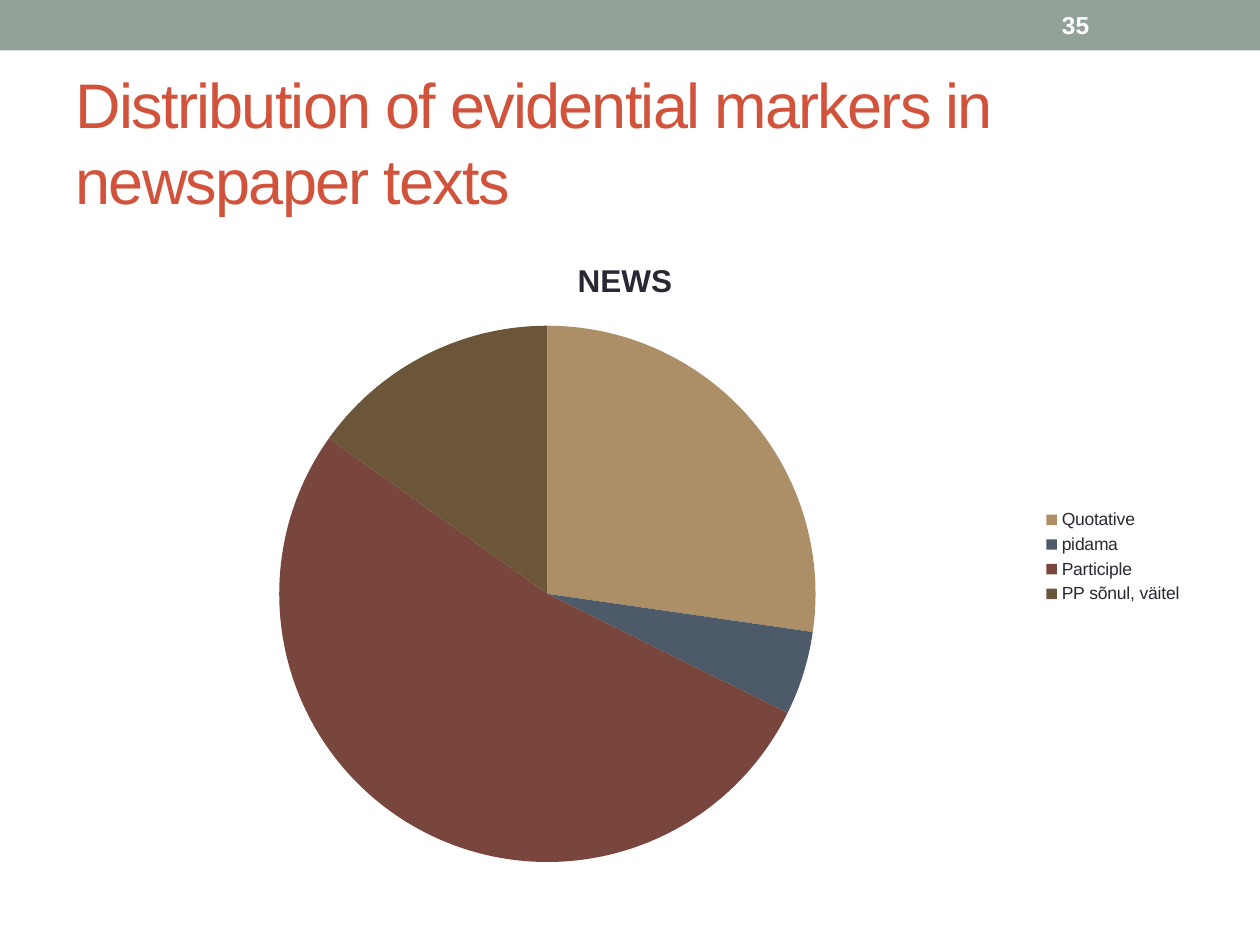
"""Build a slide with a pie chart of evidential markers in newspaper texts."""
from pptx import Presentation
from pptx.chart.data import CategoryChartData
from pptx.dml.color import RGBColor
from pptx.enum.chart import XL_CHART_TYPE, XL_LEGEND_POSITION
from pptx.enum.shapes import MSO_SHAPE
from pptx.enum.text import MSO_ANCHOR, MSO_AUTO_SIZE, PP_ALIGN
from pptx.util import Pt

PIE = XL_CHART_TYPE.PIE
RIGHT = XL_LEGEND_POSITION.RIGHT
RECTANGLE = MSO_SHAPE.RECTANGLE
MIDDLE = MSO_ANCHOR.MIDDLE
NO_AUTOFIT = MSO_AUTO_SIZE.NONE
LEFT = PP_ALIGN.LEFT

FONT = "Arial"
COLORS = {"band": "93A299", "title": "D2533C", "number": "FFFFFF", "text": "292934"}
MARKERS = [
    ("Quotative", 27, "AD8F67"),
    ("pidama ", 5, "4C5A6A"),
    ("Participle", 52, "79463D"),
    ("PP sõnul, väitel", 15, "6C563A"),
]


def style_font(font, size, color, bold=False):
    font.name, font.size, font.bold = FONT, Pt(size), bold
    font.color.rgb = RGBColor.from_string(color)


def fill_text(frame, text, size, color, bold=False):
    frame.word_wrap = True
    frame.auto_size = NO_AUTOFIT
    frame.vertical_anchor = MIDDLE
    paragraph = frame.paragraphs[0]
    paragraph.text = text
    paragraph.alignment = LEFT
    style_font(paragraph.font, size, color, bold)


def add_band(slide):
    band = slide.shapes.add_shape(RECTANGLE, 0, 0, Pt(720), Pt(28.8))
    band.shadow.inherit = False
    band.fill.solid()
    band.fill.fore_color.rgb = RGBColor.from_string(COLORS["band"])
    band.line.fill.background()


def set_title(slide, text):
    title = slide.shapes.title
    title.left, title.top, title.width, title.height = Pt(36), Pt(41.76), Pt(648), Pt(77.76)
    fill_text(title.text_frame, text, 36, COLORS["title"])
    for run in title.text_frame.paragraphs[0].runs:
        run.font._element.set("spc", "-100")


def add_page_number(slide, number):
    box = slide.shapes.add_textbox(Pt(599.76), Pt(1.44), Pt(84.24), Pt(25.92))
    fill_text(box.text_frame, number, 14, COLORS["number"], True)


def add_pie(slide, heading):
    data = CategoryChartData()
    data.categories = [name for name, _, _ in MARKERS]
    data.add_series(heading, [share for _, share, _ in MARKERS])
    chart = slide.shapes.add_chart(
        PIE, Pt(30.96), Pt(133.92), Pt(652.32), Pt(368.64), data
    ).chart
    style_font(chart.font, 10, COLORS["text"])

    chart.has_title = True
    heading_line = chart.chart_title.text_frame.paragraphs[0]
    heading_line.text = heading
    style_font(heading_line.font, 18, COLORS["text"], True)
    chart.chart_title.include_in_layout = False

    chart.has_legend = True
    chart.legend.position = RIGHT
    chart.legend.include_in_layout = False
    style_font(chart.legend.font, 10, COLORS["text"])

    plot = chart.plots[0]
    plot.vary_by_categories = True
    for index, (_, _, color) in enumerate(MARKERS):
        slice_fill = plot.series[0].points[index].format.fill
        slice_fill.solid()
        slice_fill.fore_color.rgb = RGBColor.from_string(color)


def main():
    presentation = Presentation()
    presentation.slide_width, presentation.slide_height = Pt(720), Pt(540)
    slide = presentation.slides.add_slide(presentation.slide_layouts[5])
    add_band(slide)
    set_title(slide, "Distribution of evidential markers in newspaper texts")
    add_page_number(slide, "35")
    add_pie(slide, "NEWS")
    presentation.save("out.pptx")


if __name__ == "__main__":
    main()
